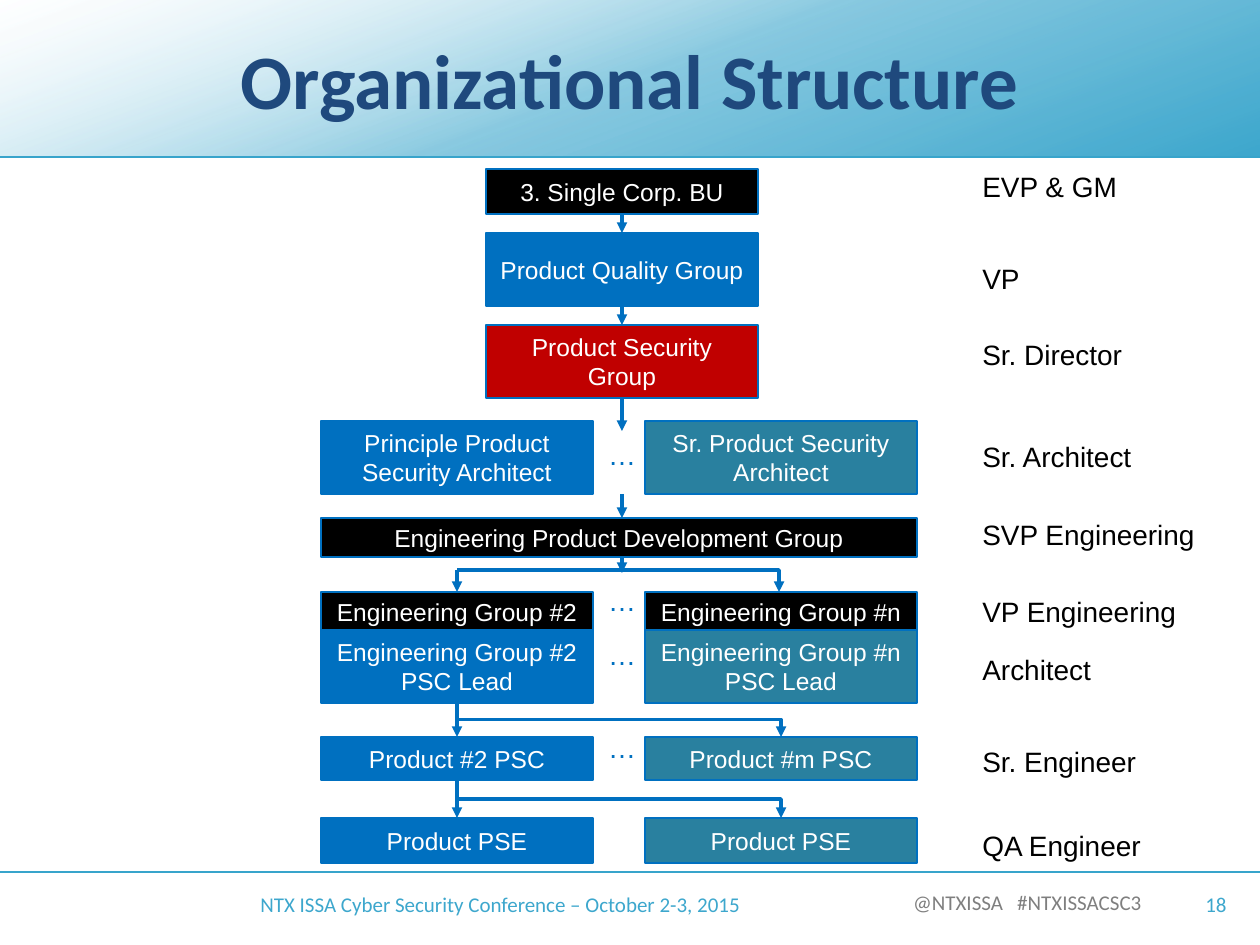
from lxml.etree import SubElement
from pptx import Presentation
from pptx.dml.color import RGBColor
from pptx.enum.shapes import MSO_CONNECTOR, MSO_SHAPE
from pptx.enum.text import MSO_ANCHOR, PP_ALIGN
from pptx.oxml import parse_xml
from pptx.oxml.ns import nsdecls, qn
from pptx.util import Pt

PX = 914400 / 126


class Theme:
    BLACK, WHITE, RED = "000000", "FFFFFF", "C00000"
    BLUE, TEAL, NAVY = "0070C0", "29809F", "1F497D"
    SKY, RULE, GREY = "3DA7CD", "38A4CB", "7F7F7F"
    TITLE = dict(name="Calibri", size=44, bold=True, color=NAVY)
    FOOT = dict(name="Calibri", size=12, color=SKY)
    HANDLE = dict(name="Calibri", size=12, color=GREY)
    BOX = dict(name="Arial", size=14, color=WHITE)
    DOTS = dict(name="Arial", size=16, color=BLUE)
    ROLE = dict(name="Arial", size=16, color=BLACK)
    BAND_STOPS = [(0, WHITE, 20), (50, SKY, 60), (100, SKY, 100)]
    BAND_ANGLE = 70


def emu(*lengths):
    return [round(v * PX) for v in lengths]


def set_font(p, style):
    for key, value in style.items():
        if key == "color":
            p.font.color.rgb = RGBColor.from_string(value)
        else:
            setattr(p.font, key, Pt(value) if key == "size" else value)


def write(tf, text, style, align=PP_ALIGN.LEFT, anchor=MSO_ANCHOR.MIDDLE):
    tf.word_wrap = True
    tf.vertical_anchor = anchor
    p = tf.paragraphs[0]
    p.add_run().text = text
    p.alignment = align
    set_font(p, style)


def add_text(s, box, text, style, **format_values):
    tf = s.shapes.add_textbox(*emu(*box)).text_frame
    write(tf, text, style, **format_values)
    return tf


def add_line(s, kind, points, color, width, arrow=False):
    c = s.shapes.add_connector(kind, *emu(*points))
    c.line.color.rgb = RGBColor.from_string(color)
    c.line.width = Pt(width)
    if arrow:
        SubElement(c.line._get_or_add_ln(), qn("a:tailEnd"), type="triangle")
    SubElement(c._element.spPr, qn("a:effectLst"))
    return c


def add_arrow(s, x, y1, y2):
    add_line(s, MSO_CONNECTOR.STRAIGHT, (x, y1, x, y2), Theme.BLUE, 2, True)


def add_branch(s, x1, y1, x2, y2):
    """Elbow that runs down, across and down again."""
    mx, my = (x1 + x2) / 2, (y1 + y2) / 2
    w, h = y2 - y1, x2 - x1
    points = (mx + w / 2, my - h / 2, mx - w / 2, my + h / 2)
    c = add_line(s, MSO_CONNECTOR.ELBOW, points, Theme.BLUE, 2, True)
    c._element.spPr.find(qn("a:xfrm")).set("rot", str(270 * 60000))


def add_corner(s, x1, y1, x2, y2):
    """Elbow that runs across and then down."""
    c = add_line(s, MSO_CONNECTOR.ELBOW, (x1, y1, x2, y2), Theme.BLUE, 2, True)
    c._element.spPr.find(qn("a:prstGeom")).set("prst", "bentConnector2")


def add_rule(s, x, y, w):
    add_line(s, MSO_CONNECTOR.STRAIGHT, (x, y, x + w, y), Theme.RULE, 1.5)


def add_box(s, box, text, fill):
    sp = s.shapes.add_shape(MSO_SHAPE.RECTANGLE, *emu(*box))
    sp.shadow.inherit = False
    sp.fill.solid()
    sp.fill.fore_color.rgb = RGBColor.from_string(fill)
    sp.line.color.rgb = RGBColor.from_string(Theme.BLUE)
    sp.line.width = Pt(0.75)
    write(sp.text_frame, text, Theme.BOX, PP_ALIGN.CENTER)


def header(s, x, y, w, h):
    band = s.shapes.add_shape(MSO_SHAPE.RECTANGLE, *emu(x, y, w, h))
    band.shadow.inherit = False
    band.line.fill.background()
    stops = "".join(
        f'<a:gs pos="{pos * 1000}"><a:srgbClr val="{color}">'
        f'<a:alpha val="{alpha * 1000}"/></a:srgbClr></a:gs>'
        for pos, color, alpha in Theme.BAND_STOPS)
    band._element.spPr.find(qn("a:prstGeom")).addnext(parse_xml(
        f'<a:gradFill {nsdecls("a")} rotWithShape="1"><a:gsLst>{stops}</a:gsLst>'
        f'<a:lin ang="{Theme.BAND_ANGLE * 60000}" scaled="0"/></a:gradFill>'))
    add_rule(s, x, y + h, w)
    add_text(s, (x + 21, y + 21, w - 42, 116), "Organizational Structure",
             Theme.TITLE, align=PP_ALIGN.CENTER)


def footer(s, x, y, w):
    add_rule(s, x, y, w)
    add_text(s, (x + 248, y + 10, 602, 44),
             "NTX ISSA Cyber Security Conference – October 2-3, 2015", Theme.FOOT)
    add_text(s, (x + 703, y + 8, 451, 44), "@NTXISSA   #NTXISSACSC3",
             Theme.HANDLE, align=PP_ALIGN.RIGHT)
    add_text(s, (x + 1165, y + 10, 74, 44), "18", Theme.FOOT, align=PP_ALIGN.RIGHT)


def org_chart(s, x, y, w):
    box_w = 272
    right = w - box_w
    mid, left_mid, right_mid = x + w // 2 + 3, x + box_w // 2, x + right + box_w // 2

    for top, bottom in [(45, 64), (137, 156), (230, 262), (325, 349), (380, 404)]:
        add_arrow(s, mid, y + top, y + bottom)
    for top, bottom in [(401, 423), (533, 568), (611, 649)]:
        add_arrow(s, left_mid, y + top, y + bottom)
    add_corner(s, left_mid, y + 401, right_mid - 2, y + 423)
    for top, bottom in [(533, 568), (611, 649)]:
        add_branch(s, left_mid, y + top, right_mid, y + bottom)

    singles = [
        (0, 45, "3. Single Corp. BU", Theme.BLACK),
        (64, 73, "Product Quality Group", Theme.BLUE),
        (156, 73, "Product Security Group", Theme.RED),
    ]
    for top, h, text, fill in singles:
        add_box(s, (mid - box_w // 2, y + top, box_w, h), text, fill)
    add_box(s, (x, y + 349, w, 39), "Engineering Product Development Group", Theme.BLACK)

    colors, group_colors = (Theme.BLUE, Theme.TEAL), (Theme.BLACK, Theme.BLACK)
    pairs = [
        (252, 73, "Principle Product Security Architect",
         "Sr. Product Security Architect", colors),
        (423, 39, "Engineering Group #2", "Engineering Group #n", group_colors),
        (461, 73, "Engineering Group #2 PSC Lead", "Engineering Group #n PSC Lead", colors),
        (568, 43, "Product #2 PSC", "Product #m PSC", colors),
        (649, 45, "Product PSE", "Product PSE", colors),
    ]
    for top, h, first, last, fills in pairs:
        for dx, text, fill in zip((0, right), (first, last), fills):
            add_box(s, (x + dx, y + top, box_w, h), text, fill)

    for top in (262, 408, 462, 555):
        tf = add_text(s, (mid - 25, y + top, 50, 47), "…", Theme.DOTS,
                      align=PP_ALIGN.CENTER, anchor=MSO_ANCHOR.TOP)
        tf.margin_left = tf.margin_right = 0


def roles(s, x, y, w, h):
    first, *rest = [
        ("EVP & GM", 0), ("VP", 59), ("Sr. Director", 42), ("Sr. Architect", 69),
        ("SVP Engineering", 44), ("VP Engineering", 43), ("Architect", 25),
        ("Sr. Engineer", 58), ("QA Engineer", 51),
    ]
    tf = add_text(s, (x, y, w, h), first[0], Theme.ROLE, anchor=MSO_ANCHOR.TOP)
    for text, gap in rest:
        p = tf.add_paragraph()
        p.add_run().text = text
        p.space_before = Pt(round(gap * 72 / 126, 1))
        set_font(p, Theme.ROLE)


def main():
    prs = Presentation()
    prs.slide_width, prs.slide_height = emu(1260, 945)
    s = prs.slides.add_slide(prs.slide_layouts[6])
    header(s, 0, 0, 1260, 157)
    footer(s, 0, 872, 1260)
    org_chart(s, 321, 169, 596)
    roles(s, 970, 163, 285, 726)
    prs.save("out.pptx")


if __name__ == "__main__":
    main()
